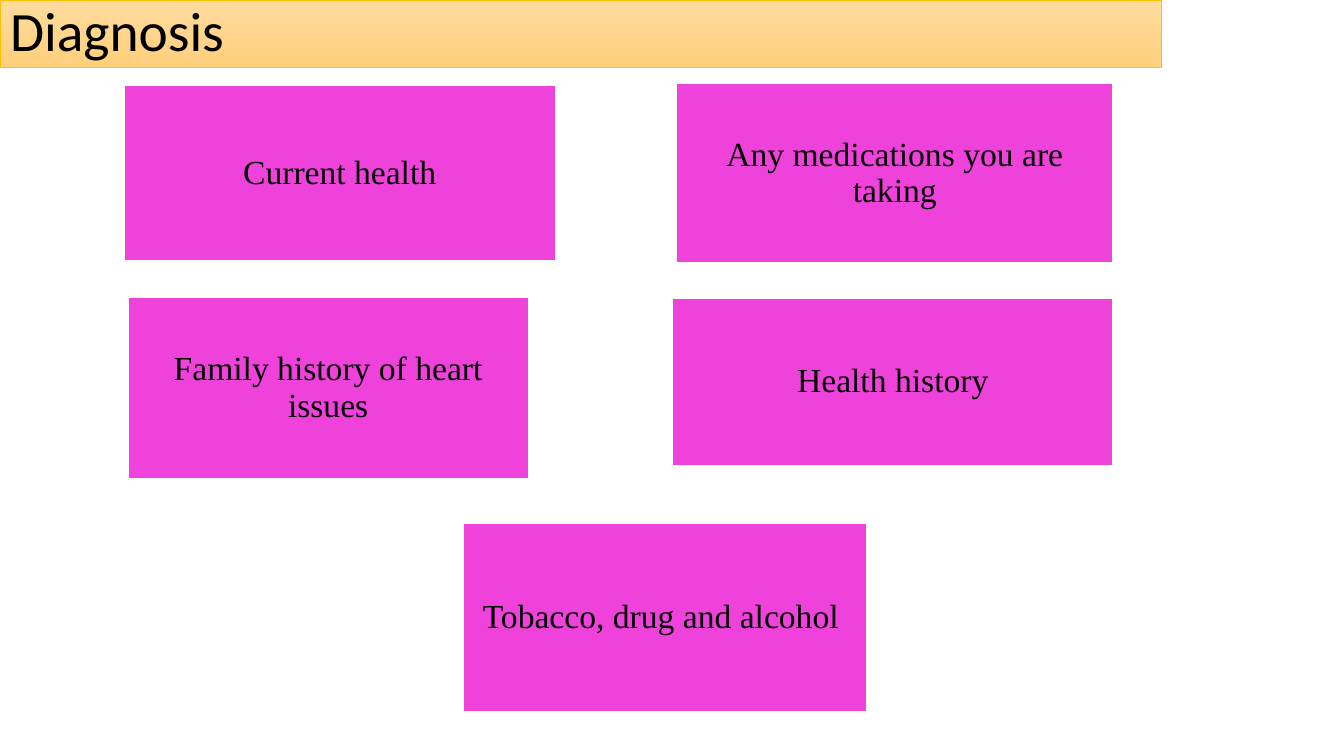
from pptx import Presentation
from pptx.dml.color import RGBColor
from pptx.enum import shapes, text
from pptx.util import Inches, Pt

FACTORS = [
    ("Current health", (1.23, 0.85, 4.28, 1.74)),
    ("Any medications you are taking", (6.71, 0.83, 4.33, 1.78)),
    ("Family history of heart issues", (1.27, 2.95, 3.97, 1.8)),
    ("Health history", (6.67, 2.96, 4.37, 1.66)),
    ("Tobacco, drug and alcohol ", (4.59, 5.19, 4.01, 1.87)),
]


def color(hex_value):
    """Return the RGB colour for a hex string."""
    return RGBColor.from_string(hex_value)


def outline(shape, hex_value, width):
    """Give a shape a solid outline."""
    shape.line.color.rgb = color(hex_value)
    shape.line.width = Pt(width)


def write(shape, words, *, size, font, align, inset_y):
    """Write one formatted paragraph, centred vertically in a shape."""
    frame = shape.text_frame
    frame.word_wrap = True
    frame.auto_size = text.MSO_AUTO_SIZE.NONE
    frame.vertical_anchor = text.MSO_ANCHOR.MIDDLE
    frame.margin_left = frame.margin_right = Inches(0.1)
    frame.margin_top = frame.margin_bottom = Inches(inset_y)
    paragraph = frame.paragraphs[0]
    paragraph.alignment = align
    paragraph.line_spacing = 0.9
    run = paragraph.add_run()
    run.text = words
    run.font.size = Pt(size)
    run.font.name = font
    run.font.color.rgb = color("000000")


def add_title(slide, words, box):
    """Turn the title placeholder into a gradient banner."""
    title = slide.shapes.title
    title.left, title.top, title.width, title.height = map(Inches, box)
    title.fill.gradient()
    title.fill.gradient_angle = 270
    for stop, hex_value in zip(title.fill.gradient_stops, ("FFDB9E", "FFD07C")):
        stop.color.rgb = color(hex_value)
    outline(title, "FFC000", 0.5)
    write(title, words, size=39.6, font="Calibri", align=text.PP_ALIGN.LEFT, inset_y=0.05)


def add_factor(slide, words, box):
    """Add one labelled block to the slide."""
    block = slide.shapes.add_shape(shapes.MSO_SHAPE.RECTANGLE, *map(Inches, box))
    block.shadow.inherit = False
    block.fill.solid()
    block.fill.fore_color.rgb = color("EE42DA")
    outline(block, "FFFFFF", 1)
    write(block, words, size=24, font="Times New Roman", align=text.PP_ALIGN.CENTER, inset_y=0.1)


def main():
    """Build and save the presentation."""
    presentation = Presentation()
    presentation.slide_width = Inches(13.33)
    presentation.slide_height = Inches(7.5)
    slide = presentation.slides.add_slide(presentation.slide_layouts.get_by_name("Title Only"))
    add_title(slide, "Diagnosis", (0, 0, 11.52, 0.67))
    for words, box in FACTORS:
        add_factor(slide, words, box)
    presentation.save("out.pptx")


if __name__ == "__main__":
    main()
